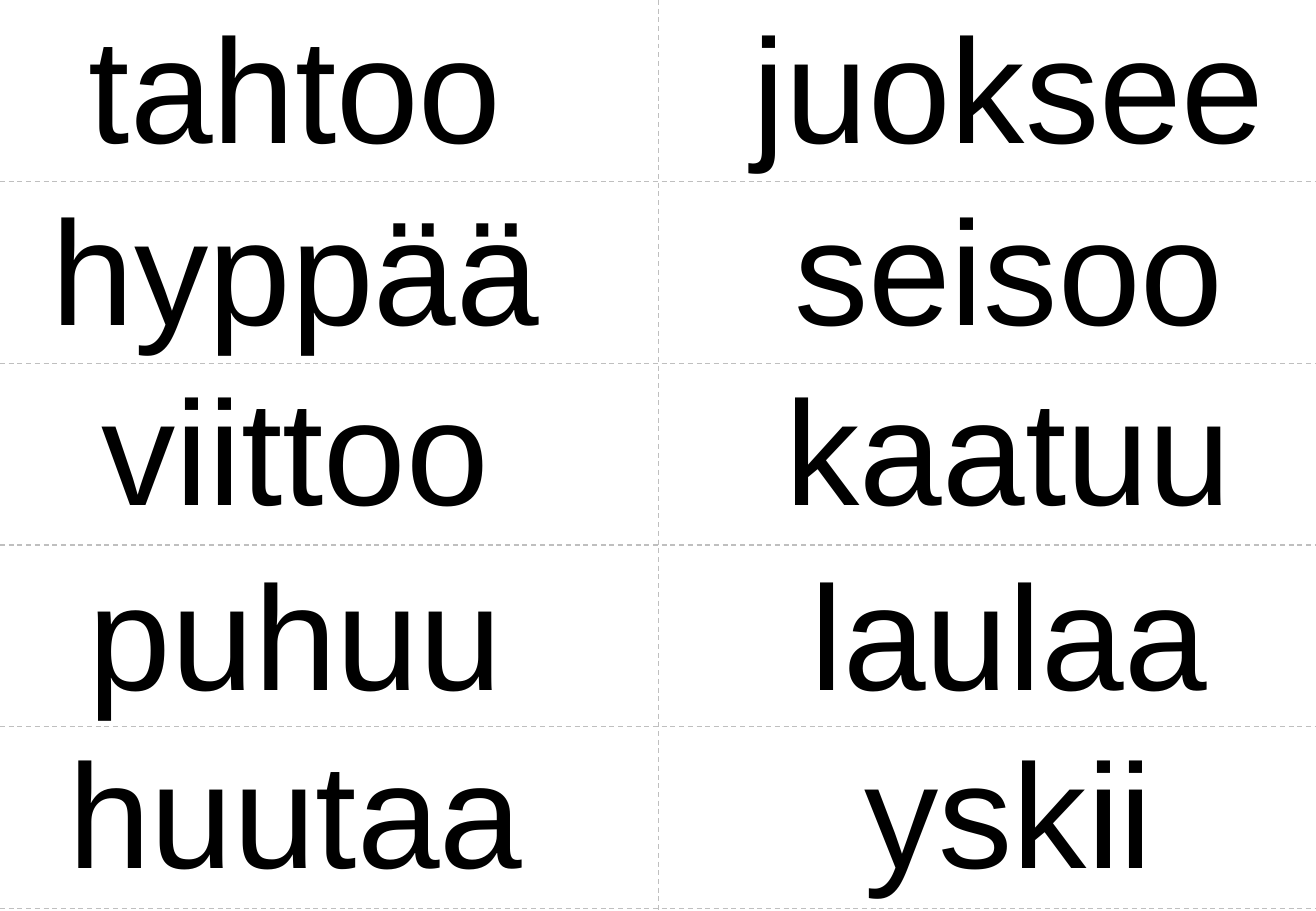
"""Build a sheet of ten Finnish verb cards with dashed cutting lines."""
from pptx import Presentation
from pptx.dml.color import RGBColor
from pptx.enum.dml import MSO_LINE
from pptx.enum.shapes import MSO_CONNECTOR
from pptx.enum.text import MSO_AUTO_SIZE as FIT, PP_ALIGN
from pptx.oxml.ns import qn
from pptx.util import Inches, Pt
from lxml.etree import SubElement

BLACK = RGBColor(0x00, 0x00, 0x00)
GREY = RGBColor(0xBF, 0xBF, 0xBF)
WIDE, HIGH = 10.83, 7.5
MID, STEP = 5.42, 1.496

tops = [-0.09, 1.41, 2.89, 4.41, 5.88]
columns = [
    (2.43, [("tahtoo", 3.51), ("hyppää", 4.12), ("viittoo", 3.31),
            ("puhuu", 3.51), ("huutaa", 3.85)]),
    (8.3, [("juoksee", 4.33), ("seisoo", 3.65), ("kaatuu", 3.78),
           ("laulaa", 3.38), ("yskii", 2.49)]),
]

deck = Presentation()
deck.slide_width, deck.slide_height = Inches(WIDE), Inches(HIGH)
slide = deck.slides.add_slide(deck.slide_layouts[6])

for center, verbs in columns:
    for top, (verb, width) in zip(tops, verbs):
        card = slide.shapes.add_textbox(
            Inches(center - width / 2), Inches(top), Inches(width), Inches(1.48))
        frame = card.text_frame
        frame.word_wrap = False
        frame.auto_size = FIT.SHAPE_TO_FIT_TEXT
        frame.margin_left = frame.margin_right = Inches(0.05)
        frame.margin_top = frame.margin_bottom = Inches(0.05)
        para = frame.paragraphs[0]
        para.text = verb
        para.alignment = PP_ALIGN.CENTER
        para.font.name = "Arial"
        para.font.size = Pt(88)
        para.font.color.rgb = BLACK

cuts = [(MID, 0, MID, HIGH)]
cuts += [(0, STEP * row, WIDE, STEP * row) for row in range(1, 6)]
for ends in cuts:
    cut = slide.shapes.add_connector(MSO_CONNECTOR.STRAIGHT, *map(Inches, ends))
    cut.line.color.rgb = GREY
    cut.line.width = Pt(0.75)
    cut.line.dash_style = MSO_LINE.DASH
    SubElement(cut._element.spPr, qn("a:effectLst"))

deck.save("out.pptx")
